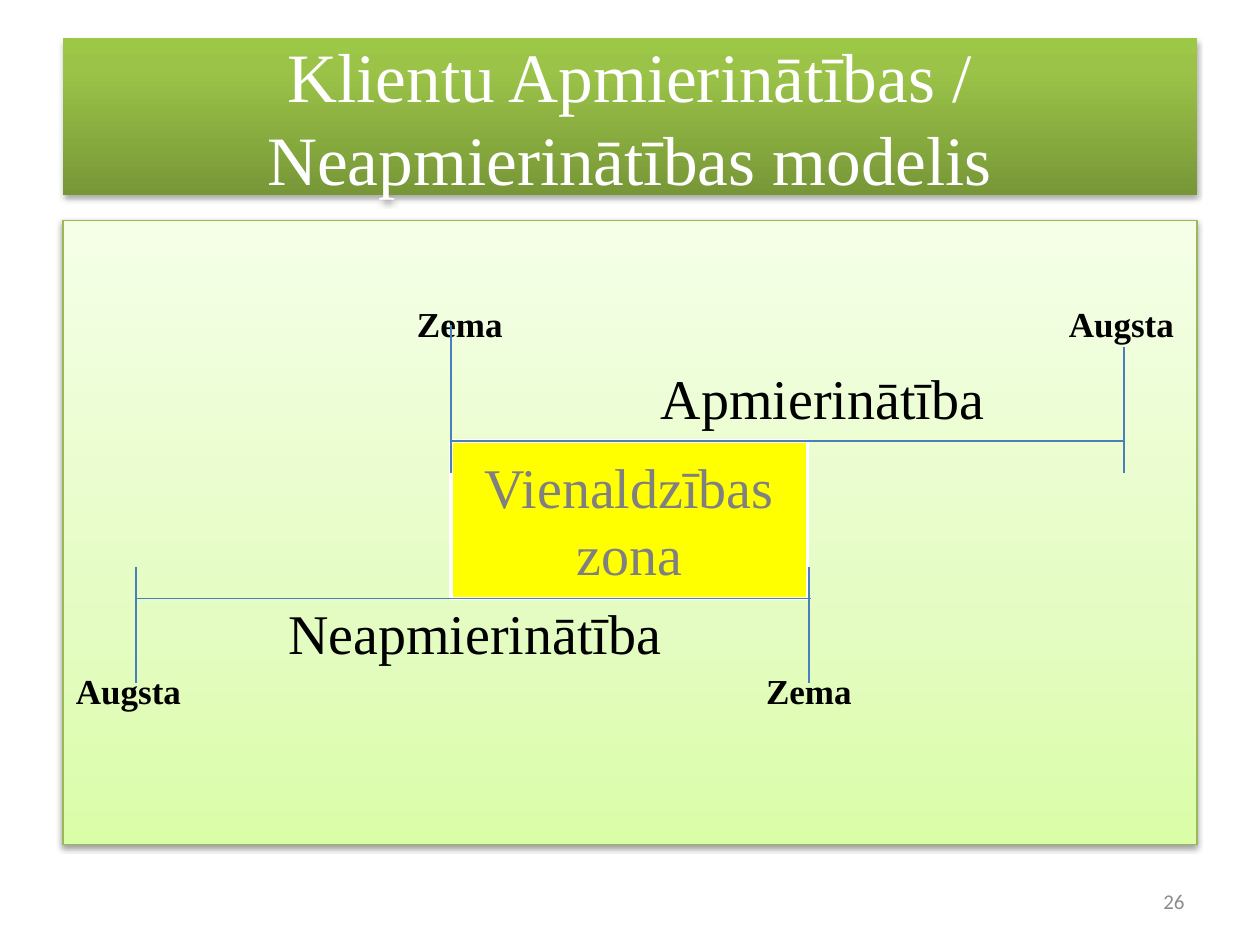
import pptx
import pptx.util
import pptx.oxml
import pptx.oxml.ns
import pptx.dml.color
import pptx.enum.shapes
import pptx.enum.text

Inches = pptx.util.Inches
Align = pptx.enum.text.PP_ALIGN

COLORS = {
    "white": "FFFFFF", "black": "000000", "yellow": "FFFF00", "grey": "808080",
    "number": "8C8C8C", "axis": "4B7EBC", "border": "98B955",
}
TITLE_STOPS = [(0, "779737"), (80, "9BC348"), (100, "9DC746")]
PANEL_STOPS = [(0, "DAFDA7"), (35, "E4FCC2"), (100, "F5FFE7")]

TITLE = "Klientu Apmierinātības / Neapmierinātības modelis"
ZONE = "Vienaldzības zona"
PAGE_NUMBER = "26"

# text, centre x, centre y, size, bold
LABELS = [
    ("Zema", 3.65, 2.57, 20, True),
    ("Augsta", 8.9, 2.57, 20, True),
    ("Apmierinātība", 6.53, 3.15, 32, False),
    ("Neapmierinātība", 3.77, 5.02, 32, False),
    ("Augsta", 1.02, 5.48, 20, True),
    ("Zema", 6.42, 5.48, 20, True),
]
# axis y, axis start and end x, then (tick x, tick top, tick bottom)
AXES = [
    (3.5, 3.58, 8.92, [(3.58, 2.58, 3.75), (8.92, 2.75, 3.75)]),
    (4.75, 1.08, 6.44, [(1.08, 4.5, 5.42), (6.42, 4.5, 5.42)]),
]

deck = pptx.Presentation()
deck.slide_width, deck.slide_height = Inches(10), Inches(7.5)
page = deck.slides.add_slide(deck.slide_layouts[6])


def rgb(name):
    return pptx.dml.color.RGBColor.from_string(COLORS[name])


def write(shape, text, size, color, font="Times New Roman", bold=False,
          align=Align.CENTER, wrap=True, margin=0.1):
    frame = shape.text_frame
    frame.word_wrap = wrap
    frame.vertical_anchor = pptx.enum.text.MSO_ANCHOR.MIDDLE
    frame.margin_left = frame.margin_right = Inches(margin)
    frame.margin_top = frame.margin_bottom = Inches(margin / 2)
    para = frame.paragraphs[0]
    para.alignment = align
    span = para.add_run()
    span.text = text
    span.font.name, span.font.size, span.font.bold = font, pptx.util.Pt(size), bold
    span.font.color.rgb = rgb(color)


def add_box(left, top, width, height, line=None, weight=0.75):
    box = page.shapes.add_shape(pptx.enum.shapes.MSO_SHAPE.RECTANGLE,
                                *map(Inches, (left, top, width, height)))
    box.shadow.inherit = False
    if line:
        box.line.color.rgb = rgb(line)
        box.line.width = pptx.util.Pt(weight)
    else:
        box.line.fill.background()
    return box


def add_gradient_and_shadow(box, stops, opacity):
    """Fill from bottom to top and drop a soft shadow straight down."""
    namespace = pptx.oxml.ns.nsdecls("a")
    stop_xml = "".join(f'<a:gs pos="{pos * 1000}"><a:srgbClr val="{color}"/></a:gs>'
                       for pos, color in stops)
    properties = box._element.spPr
    properties.find(pptx.oxml.ns.qn("a:prstGeom")).addnext(pptx.oxml.parse_xml(
        f'<a:gradFill {namespace} rotWithShape="1"><a:gsLst>{stop_xml}</a:gsLst>'
        '<a:lin ang="16200000" scaled="0"/></a:gradFill>'))
    properties.find(pptx.oxml.ns.qn("a:effectLst")).append(pptx.oxml.parse_xml(
        f'<a:outerShdw {namespace} blurRad="39400" dist="22000" dir="5400000" '
        f'rotWithShape="0"><a:srgbClr val="{COLORS["black"]}">'
        f'<a:alpha val="{opacity * 1000}"/></a:srgbClr></a:outerShdw>'))


def add_line(x1, y1, x2, y2):
    line = page.shapes.add_connector(pptx.enum.shapes.MSO_CONNECTOR.STRAIGHT,
                                     *map(Inches, (x1, y1, x2, y2)))
    line.line.color.rgb = rgb("axis")
    line.line.width = pptx.util.Pt(0.75)
    line._element.spPr.append(
        pptx.oxml.parse_xml(f'<a:effectLst {pptx.oxml.ns.nsdecls("a")}/>'))


title = add_box(0.5, 0.3, 9, 1.25)
add_gradient_and_shadow(title, TITLE_STOPS, 35)
write(title, TITLE, 39.6, "white")

panel = add_box(0.5, 1.75, 9, 4.95, line="border")
add_gradient_and_shadow(panel, PANEL_STOPS, 38)

for text, x, y, size, bold in LABELS:
    width, height = size * len(text) / 100, size / 50
    label = page.shapes.add_textbox(*map(Inches, (x - width / 2, y - height / 2,
                                                  width, height)))
    write(label, text, size, "black", bold=bold, wrap=False, margin=0)

zone = add_box(3.58, 3.5, 2.83, 1.25, line="white", weight=2)
zone.fill.solid()
zone.fill.fore_color.rgb = rgb("yellow")
write(zone, ZONE, 32, "grey")

for y, start, end, ticks in AXES:
    add_line(start, y, end, y)
    for x, top, bottom in ticks:
        add_line(x, y, x, top)
        add_line(x, y, x, bottom)

number = page.shapes.add_textbox(*map(Inches, (7.17, 6.95, 2.33, 0.4)))
write(number, PAGE_NUMBER, 12, "number", font="Calibri", align=Align.RIGHT)

deck.save("out.pptx")
